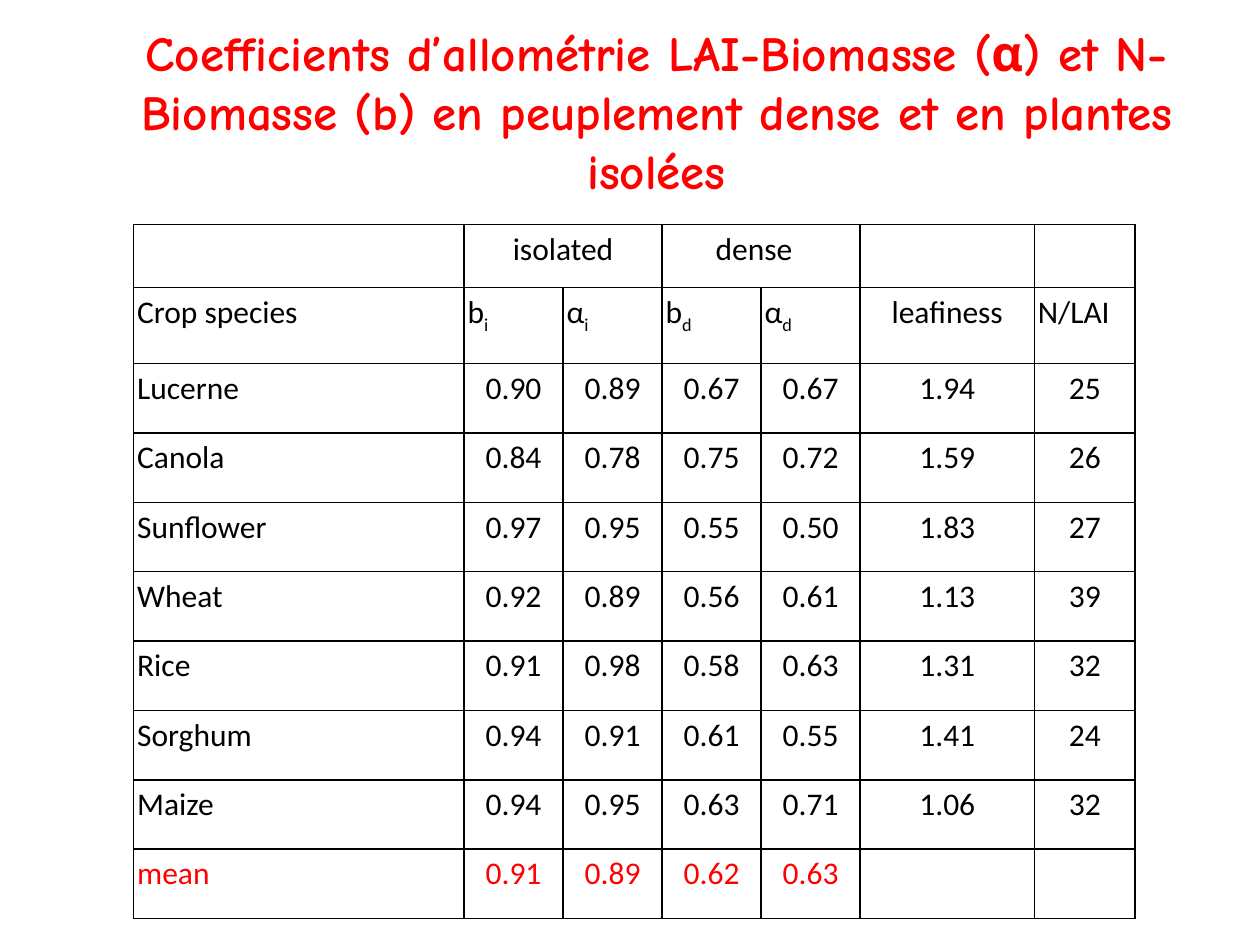
from lxml.etree import SubElement
from pptx import Presentation
from pptx.dml.color import RGBColor
from pptx.enum.text import MSO_ANCHOR, MSO_AUTO_SIZE, PP_ALIGN
from pptx.oxml.ns import qn
from pptx.util import Pt

BLACK = RGBColor(0x00, 0x00, 0x00)
RED = RGBColor(0xFF, 0x00, 0x00)

TITLE = (
    "Coefficients d’allométrie LAI-Biomasse (α) et N-Biomasse (b) "
    "en peuplement dense et en plantes isolées"
)
COLUMN_WIDTHS = [188.8] + [56.6] * 4 + [99.6, 57.6]
ROW_HEIGHTS = [36, 43.6] + [39.65] * 8
GROUPS = ["", "isolated", "", "dense", "", "", ""]
HEADINGS = ["Crop species", "b_i", "α_i", "b_d", "α_d", "leafiness", "N/LAI"]
CROPS = [
    ["Lucerne", "0.90", "0.89", "0.67", "0.67", "1.94", "25"],
    ["Canola", "0.84", "0.78", "0.75", "0.72", "1.59", "26"],
    ["Sunflower", "0.97", "0.95", "0.55", "0.50", "1.83", "27"],
    ["Wheat", "0.92", "0.89", "0.56", "0.61", "1.13", "39"],
    ["Rice", "0.91", "0.98", "0.58", "0.63", "1.31", "32"],
    ["Sorghum", "0.94", "0.91", "0.61", "0.55", "1.41", "24"],
    ["Maize", "0.94", "0.95", "0.63", "0.71", "1.06", "32"],
]
MEANS = ["mean", "0.91", "0.89", "0.62", "0.63", "", ""]


class SlideBuilder:
    """Adds consistently styled elements to one slide."""

    title_font = "Comic Neue"
    table_font = "Calibri"
    title_size = 28
    table_size = 18

    def __init__(self, slide):
        self.slide = slide

    def add_span(self, para, text, font, size, color, bold=False):
        span = para.add_run()
        span.text = text
        span.font.name = font
        span.font.size = Pt(size)
        span.font.color.rgb = color
        span.font.bold = bold
        return span

    def add_title(self, text, left, top, width, height):
        box = self.slide.shapes.title
        box.left, box.top, box.width, box.height = map(Pt, (left, top, width, height))
        frame = box.text_frame
        frame.word_wrap = True
        frame.auto_size = MSO_AUTO_SIZE.NONE
        frame.vertical_anchor = MSO_ANCHOR.TOP
        para = frame.paragraphs[0]
        para.alignment = PP_ALIGN.CENTER
        para.line_spacing = 1.0
        para.space_before = Pt(0)
        self.add_span(para, text, self.title_font, self.title_size, RED, bold=True)

    def add_table(self, rows, left, top, widths, heights):
        frame = self.slide.shapes.add_table(
            len(rows), len(widths), Pt(left), Pt(top), Pt(sum(widths)), Pt(sum(heights))
        )
        table = frame.table
        table.first_row = False
        table.horz_banding = False
        for column, width in zip(table.columns, widths):
            column.width = Pt(width)
        for row, height in zip(table.rows, heights):
            row.height = Pt(height)
        for row_index, values in enumerate(rows):
            for column_index, text in enumerate(values):
                self.style_cell(table.cell(row_index, column_index))
                if text:
                    centered = column_index > 0 and (
                        row_index != 1 or text == "leafiness"
                    )
                    color = RED if values is MEANS else BLACK
                    self.fill_cell(
                        table.cell(row_index, column_index), text, centered, color
                    )
        return table

    def style_cell(self, cell):
        cell.margin_left = cell.margin_right = Pt(2)
        cell.margin_top = cell.margin_bottom = Pt(0)
        properties = cell._tc.get_or_add_tcPr()
        for side in ("a:lnL", "a:lnR", "a:lnT", "a:lnB"):
            line = SubElement(properties, qn(side), w=str(Pt(1)))
            fill = SubElement(line, qn("a:solidFill"))
            SubElement(fill, qn("a:srgbClr"), val=str(BLACK))
        cell.fill.background()

    def fill_cell(self, cell, text, centered, color):
        para = cell.text_frame.paragraphs[0]
        para.alignment = PP_ALIGN.CENTER if centered else PP_ALIGN.LEFT
        para.line_spacing = 1.15
        base, _, subscript = text.partition("_")
        self.add_span(para, base, self.table_font, self.table_size, color)
        if subscript:
            span = self.add_span(
                para, subscript, self.table_font, self.table_size, color
            )
            span._r.get_or_add_rPr().set("baseline", "-25000")


def main():
    deck = Presentation()
    deck.slide_width, deck.slide_height = Pt(720), Pt(540)
    page = SlideBuilder(deck.slides.add_slide(deck.slide_layouts[5]))
    table = page.add_table(
        [GROUPS, HEADINGS, *CROPS, MEANS], 76.4, 128.2, COLUMN_WIDTHS, ROW_HEIGHTS
    )
    for start in (1, 3):
        table.cell(0, start).merge(table.cell(0, start + 1))
    table.cell(0, 3).margin_right = Pt(10)
    page.add_title(TITLE, 41.8, 9.4, 666.7, 108.7)
    deck.save("out.pptx")


if __name__ == "__main__":
    main()
